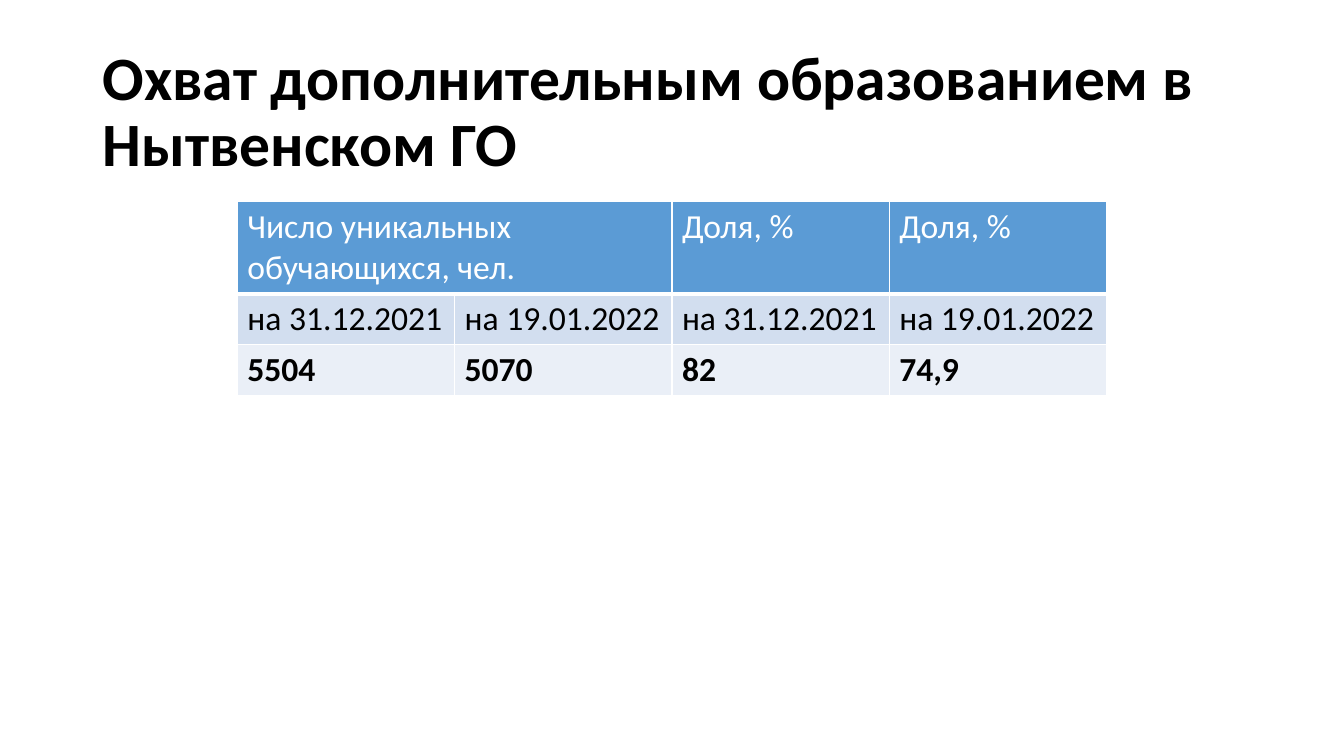
from dataclasses import dataclass

from lxml.etree import SubElement
from pptx import Presentation
from pptx.dml.color import RGBColor
from pptx.enum.text import MSO_ANCHOR as Anchor, MSO_AUTO_SIZE as AutoSize, PP_ALIGN as Align
from pptx.oxml.ns import qn
from pptx.table import _Cell as Cell
from pptx.text.text import _Paragraph as Paragraph
from pptx.util import Pt

COLORS = {
    "text": "000000",
    "white": "FFFFFF",
    "header": "5B9BD5",
    "dates": "D2DEEF",
    "values": "EAEFF7",
}
HEADER_BORDERS = {"lnL": 1, "lnR": 1, "lnT": 1, "lnB": 3}


@dataclass
class TableRow:
    texts: list[str]
    height: float
    fill: str
    color: str = "text"
    bold: bool = False


ROWS = [
    TableRow(["Число уникальных обучающихся, чел.", "", "Доля, %", "Доля, %"], 65, "header", "white"),
    TableRow(["на 31.12.2021", "на 19.01.2022"] * 2, 36.5, "dates"),
    TableRow(["5504", "5070", "82", "74,9"], 36.5, "values", bold=True),
]


def write(p: Paragraph, text: str, size: float, color: str, bold: bool) -> None:
    r = p.add_run()
    r.text = text
    for name, value in {"name": "Calibri", "size": Pt(size), "bold": bold}.items():
        setattr(r.font, name, value)
    r.font.color.rgb = RGBColor.from_string(COLORS[color])


def add_borders(cell: Cell, borders: dict[str, float]) -> None:
    props = cell._tc.get_or_add_tcPr()
    for side, width in borders.items():
        line = SubElement(props, qn(f"a:{side}"), w=str(Pt(width)))
        SubElement(SubElement(line, qn("a:solidFill")), qn("a:srgbClr"), val=COLORS["white"])


def draw_row(cells: list[Cell], row: TableRow) -> None:
    for cell, text in zip(cells, row.texts):
        if row.fill == "header":
            add_borders(cell, HEADER_BORDERS)
        cell.fill.solid()
        cell.fill.fore_color.rgb = RGBColor.from_string(COLORS[row.fill])
        if text:
            write(cell.text_frame.paragraphs[0], text, 24, row.color, row.bold)


def main() -> None:
    prs = Presentation()
    prs.slide_width, prs.slide_height = Pt(960), Pt(540)
    s = prs.slides.add_slide(prs.slide_layouts[5])

    title = s.shapes.title
    for name, value in {"left": 66, "top": 28.75, "width": 828, "height": 104.4}.items():
        setattr(title, name, Pt(value))
    tf = title.text_frame
    frame_format = {"word_wrap": True, "auto_size": AutoSize.NONE, "vertical_anchor": Anchor.MIDDLE}
    for name, value in frame_format.items():
        setattr(tf, name, value)
    p = tf.paragraphs[0]
    for name, value in {"alignment": Align.LEFT, "line_spacing": 0.9, "space_before": Pt(0)}.items():
        setattr(p, name, value)
    write(p, "Охват дополнительным образованием в Нытвенском ГО", 44, "text", True)

    height = sum(row.height for row in ROWS)
    table = s.shapes.add_table(len(ROWS), 4, Pt(169.5), Pt(144), Pt(621), Pt(height)).table
    table.cell(0, 0).merge(table.cell(0, 1))
    for table_row, row in zip(table.rows, ROWS):
        table_row.height = Pt(row.height)
        draw_row(list(table_row.cells), row)

    prs.save("out.pptx")


if __name__ == "__main__":
    main()
